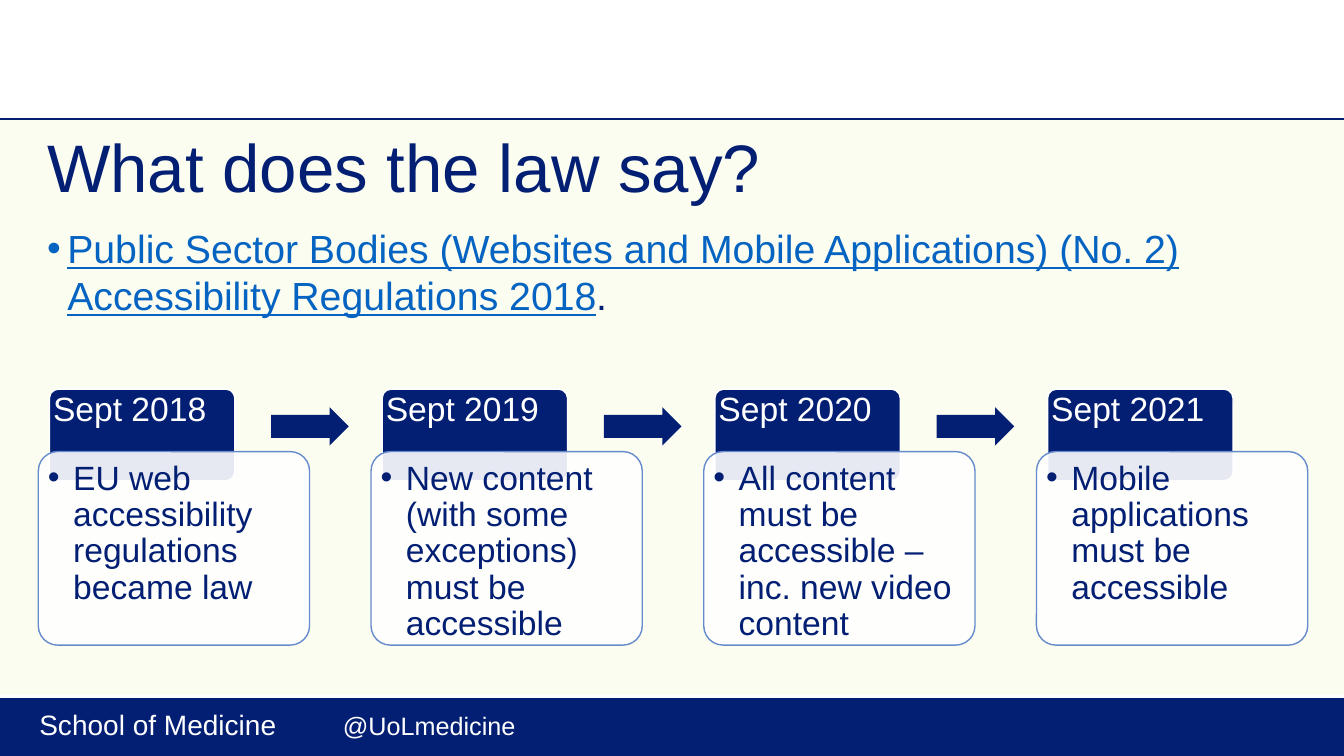
from lxml import etree
from pptx import Presentation
from pptx.dml.color import RGBColor
from pptx.enum.shapes import MSO_CONNECTOR, MSO_SHAPE as SHAPE
from pptx.enum.text import MSO_ANCHOR as ANCHOR, PP_ALIGN as ALIGN
from pptx.oxml.ns import qn
from pptx.util import Inches, Pt

NAVY, WHITE, LINK, CARD_EDGE = "031F73", "FFFFFF", "0563C1", "658BCC"


def paint(target, colour):
    if hasattr(target, "solid"):
        target.solid()
        target = target.fore_color
    else:
        target = target.color
    target.rgb = RGBColor.from_string(colour)


def write(shape, runs, inset=(0.1, 0.05), anchor=ANCHOR.TOP, spacing=1.0, bullet=0, tab=0):
    frame = shape.text_frame
    side, top = Inches(inset[0]), Inches(inset[1])
    layout = {"word_wrap": True, "vertical_anchor": anchor, "margin_left": side,
              "margin_right": side, "margin_top": top, "margin_bottom": top}
    for name, value in layout.items():
        setattr(frame, name, value)
    paragraph = frame.paragraphs[0]
    paragraph.alignment = ALIGN.LEFT
    paragraph.line_spacing = spacing
    properties = paragraph._p.get_or_add_pPr()
    if bullet:
        properties.set("marL", str(Inches(bullet)))
        properties.set("indent", str(-Inches(bullet)))
        etree.SubElement(properties, qn("a:buFont"), typeface="Arial")
        etree.SubElement(properties, qn("a:buChar"), char="•")
    if tab:
        stops = etree.SubElement(properties, qn("a:tabLst"))
        etree.SubElement(stops, qn("a:tab"), pos=str(Inches(tab)), algn="l")
    for text, size, colour, underline in runs:
        run = paragraph.add_run()
        run.text = text
        for name, value in {"name": "Arial", "size": Pt(size), "underline": underline}.items():
            setattr(run.font, name, value)
        paint(run.font, colour)


deck = Presentation()
deck.slide_width, deck.slide_height = Inches(13.33), Inches(7.5)
slide = deck.slides.add_slide(deck.slide_layouts[6])
paint(slide.background.fill, "FCFDF1")
shapes = slide.shapes

for top, height, fill, rule_y, rule_colour in [
    (6.91, 0.59, NAVY, 6.91, WHITE),
    (0, 1.18, WHITE, 1.18, NAVY),
]:
    band = shapes.add_shape(SHAPE.RECTANGLE, 0, Inches(top), deck.slide_width, Inches(height))
    band.shadow.inherit = False
    paint(band.fill, fill)
    band.line.fill.background()
    if fill == NAVY:
        write(band, [("School of Medicine \t", 20, WHITE, False), ("@UoLmedicine", 18, WHITE, False)],
              inset=(0.39, 0.05), anchor=ANCHOR.MIDDLE, spacing=0.9, tab=3.01)
    rule = shapes.add_connector(MSO_CONNECTOR.STRAIGHT, 0, Inches(rule_y),
                                deck.slide_width, Inches(rule_y))
    paint(rule.line, rule_colour)
    rule.line.width = Pt(1.5)
    etree.SubElement(rule._element.spPr, qn("a:effectLst"))

regulations = shapes.add_textbox(Inches(0.37), Inches(2.18), Inches(12.6), Inches(4.72))
write(regulations, [
    ("Public Sector Bodies (Websites and Mobile Applications) (No. 2) "
     "Accessibility Regulations 2018", 28, LINK, True),
    (".", 28, NAVY, False),
], bullet=0.2)

title = shapes.add_textbox(Inches(0.37), Inches(1.3), Inches(12.6), Inches(0.79))
write(title, [("What does the law say?", 48, NAVY, False)], anchor=ANCHOR.MIDDLE, spacing=0.9)

milestones = [
    ("Sept 2018", "EU web accessibility regulations became law"),
    ("Sept 2019", "New content (with some exceptions) must be accessible"),
    ("Sept 2020", "All content must be accessible – inc. new video content"),
    ("Sept 2021", "Mobile applications must be accessible"),
]
STEP = 3.3
for index, (date, duty) in enumerate(milestones):
    left = 0.38 + index * STEP
    date_tab = shapes.add_shape(SHAPE.ROUNDED_RECTANGLE, Inches(left + 0.11), Inches(3.86),
                                Inches(1.84), Inches(0.91))
    card = shapes.add_shape(SHAPE.ROUNDED_RECTANGLE, Inches(left), Inches(4.48),
                            Inches(2.69), Inches(1.92))
    for box, fill, edge in [(date_tab, NAVY, WHITE), (card, WHITE, CARD_EDGE)]:
        box.shadow.inherit = False
        box.adjustments[0] = 0.1
        paint(box.fill, fill)
        paint(box.line, edge)
        box.line.width = Pt(1)
    card_colour = card._element.spPr.find(qn("a:solidFill"))[0]
    etree.SubElement(card_colour, qn("a:alpha"), val="90000")
    write(date_tab, [(date, 24, WHITE, False)], inset=(0.01, 0.01), spacing=0.9)
    write(card, [(duty, 24, NAVY, False)], inset=(0.04, 0.04), spacing=0.9, bullet=0.25)

    if index < len(milestones) - 1:
        arrow = shapes.add_shape(SHAPE.RIGHT_ARROW, Inches(left + 2.31), Inches(4.04),
                                 Inches(0.77), Inches(0.38))
        arrow.shadow.inherit = False
        arrow.adjustments[0] = 0.6
        paint(arrow.fill, NAVY)
        arrow.line.fill.background()

deck.save("out.pptx")
